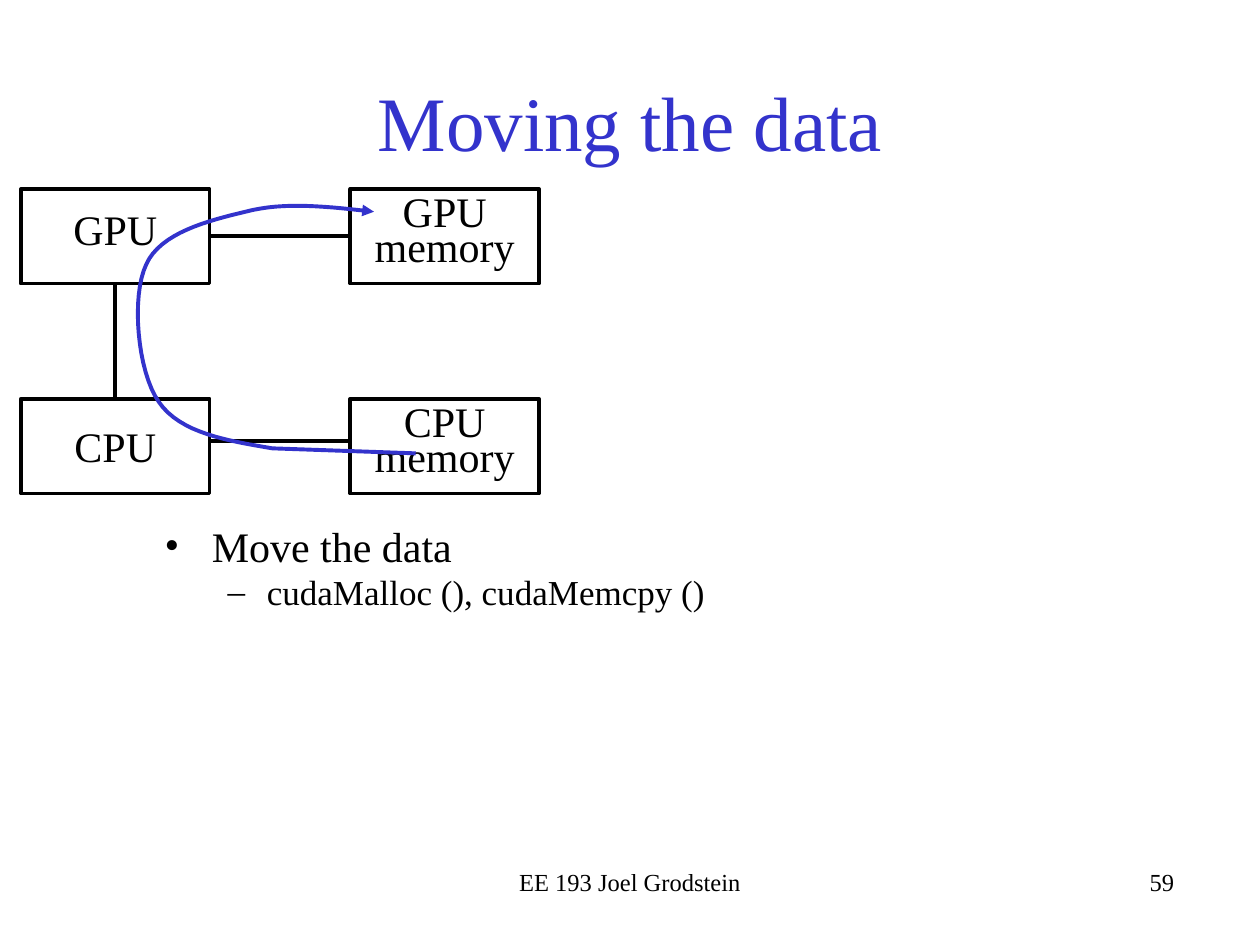
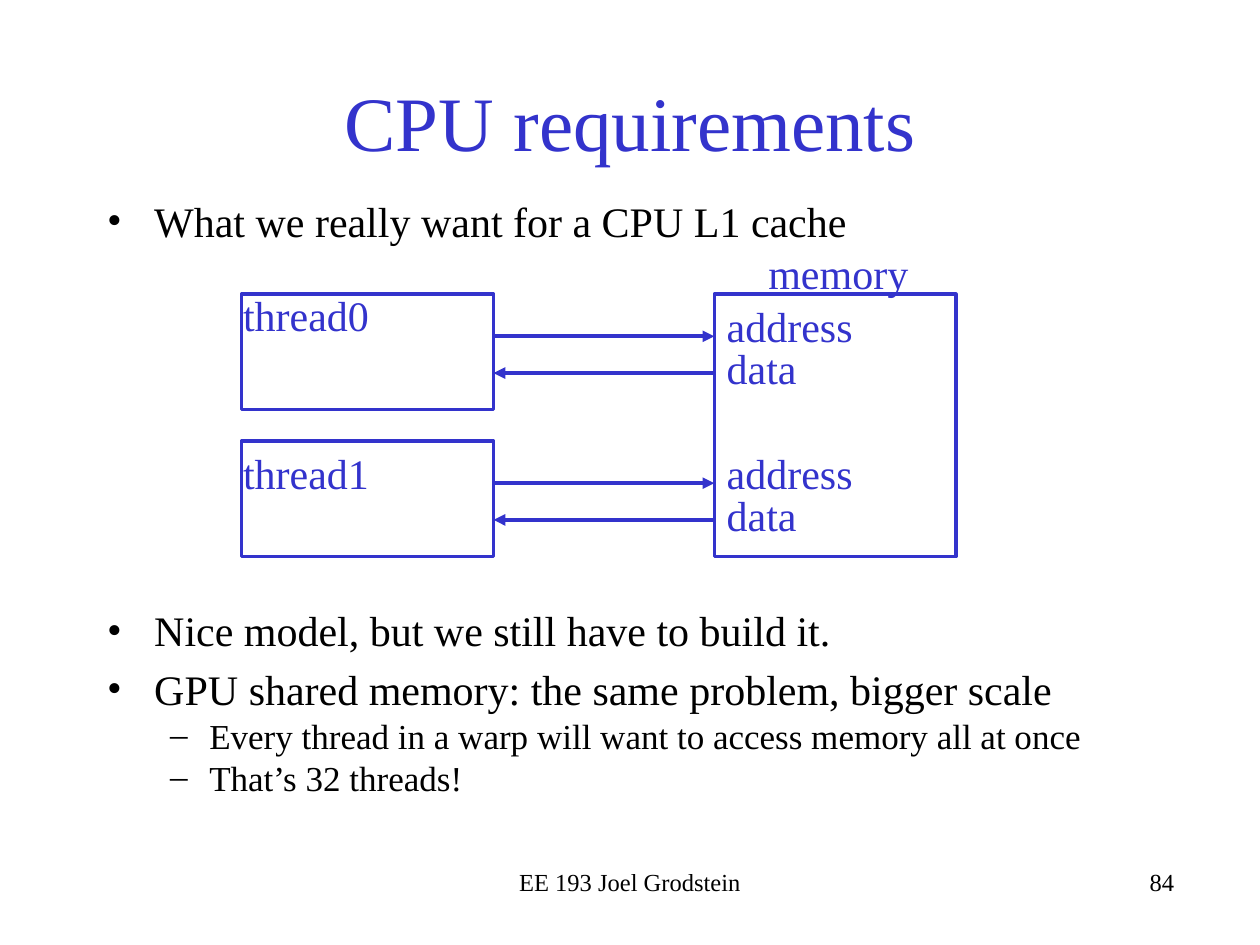
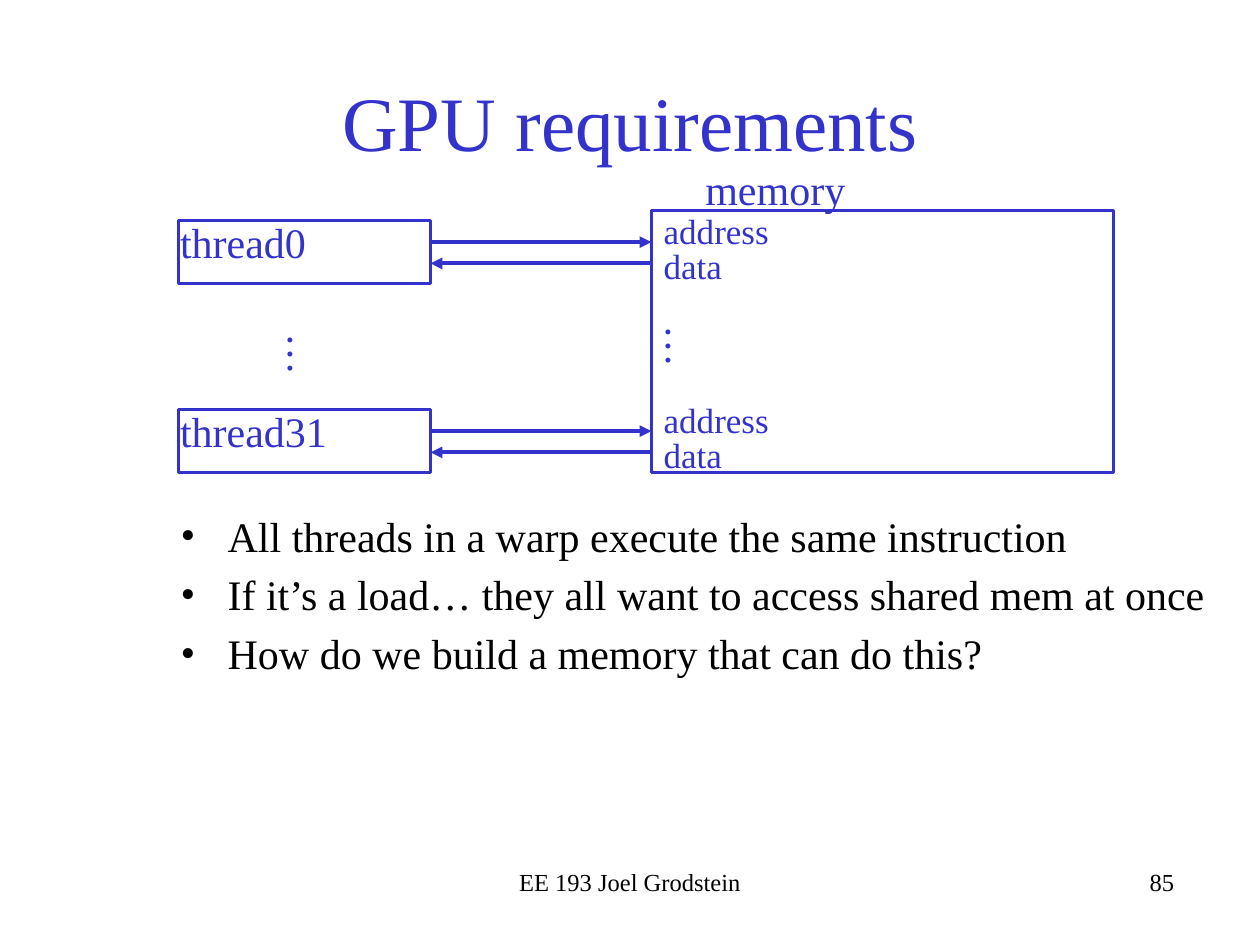
from dataclasses import dataclass
from typing import NamedTuple

from pptx import Presentation
from pptx.dml.color import RGBColor
from pptx.enum.shapes import MSO_CONNECTOR, MSO_SHAPE
from pptx.enum.text import MSO_ANCHOR as Anchor, PP_ALIGN as Align
from pptx.oxml.ns import qn
from pptx.util import Cm, Pt
from lxml.etree import SubElement

BLACK = RGBColor(0x00, 0x00, 0x00)
BLUE = RGBColor(0x33, 0x33, 0xCC)
FONT = "Times New Roman"
FOOTER = "EE 193 Joel Grodstein"


class Point(NamedTuple):
    x: float
    y: float


class Area(NamedTuple):
    """A rectangle in centimetres."""
    left: float
    top: float
    width: float
    height: float

    def lengths(self) -> list[Cm]:
        return [Cm(value) for value in self]


@dataclass(frozen=True)
class Style:
    size: int = 24
    color: RGBColor = BLUE
    align: Align = Align.LEFT
    anchor: Anchor = Anchor.TOP
    line_points: int | None = None


@dataclass(frozen=True)
class Level:
    bullet: str
    size: int
    margin: float
    hanging: float
    before_percent: int


class Item(NamedTuple):
    text: str
    level: int = 0


@dataclass(frozen=True)
class Thread:
    name: str
    top: float
    label_top: float


@dataclass(frozen=True)
class ThreadDiagram:
    """Threads at the left, each with an address and a data arrow to memory."""
    left: float
    memory_top: float
    memory_width: float
    thread_height: float
    address_drop: float
    data_drop: float
    threads: tuple[Thread, ...]

    @property
    def memory_left(self) -> float:
        return self.left + THREAD_WIDTH + ARROW_LENGTH


THREAD_WIDTH = 5.08
ARROW_LENGTH = 4.45
MEMORY_HEIGHT = 5.29
LABEL_HEIGHT = 1.27

TITLE_AREA = Area(1.91, 0.85, 21.59, 3.17)
FOOTER_AREA = Area(8.68, 17.36, 8.04, 1.27)
NUMBER_AREA = Area(15.88, 17.36, 8.04, 1.27)

LABEL = Style()
TITLE = Style(44, BLUE, Align.CENTER, Anchor.MIDDLE)
FOOTER_STYLE = Style(14, BLACK, Align.CENTER)
NUMBER_STYLE = Style(14, BLACK, Align.RIGHT)
PORTS = Style(20, line_points=20)
UNIT = Style(24, BLACK, Align.CENTER, Anchor.MIDDLE)
TIGHT_UNIT = Style(24, BLACK, Align.CENTER, Anchor.MIDDLE, 20)

LEVELS = (
    Level("•", 24, 0.95, 0.95, 20),
    Level("–", 20, 2.06, 0.79, 0),
)


def format_paragraph(para, style: Style) -> None:
    para.alignment = style.align
    if style.line_points:
        para.line_spacing = Pt(style.line_points)
    for span in para.runs:
        span.font.name = FONT
        span.font.size = Pt(style.size)
        span.font.color.rgb = style.color


def fill_text(shape, text: str, style: Style) -> None:
    frame = shape.text_frame
    frame.text = text
    frame.word_wrap = True
    frame.vertical_anchor = style.anchor
    for para in frame.paragraphs:
        format_paragraph(para, style)


def add_text(page, area: Area, text: str, style: Style = LABEL, rotation: int = 0) -> None:
    box = page.shapes.add_textbox(*area.lengths())
    box.rotation = rotation
    fill_text(box, text, style)


def add_box(page, area: Area, color: RGBColor):
    box = page.shapes.add_shape(MSO_SHAPE.RECTANGLE, *area.lengths())
    box.shadow.inherit = False
    box.fill.background()
    box.line.color.rgb = color
    box.line.width = Pt(2)
    return box


def add_arrowhead(shape) -> None:
    outline = shape._element.spPr.find(qn("a:ln"))
    SubElement(outline, qn("a:tailEnd"), type="triangle")


def add_line(page, start: Point, end: Point, color: RGBColor, arrow: bool = False) -> None:
    ends = [Cm(value) for value in (*start, *end)]
    connector = page.shapes.add_connector(MSO_CONNECTOR.STRAIGHT, *ends)
    connector.line.color.rgb = color
    connector.line.width = Pt(2.25)
    if arrow:
        add_arrowhead(connector)
    SubElement(connector._element.spPr, qn("a:effectLst"))


def add_bullets(page, area: Area, items: list[Item]) -> None:
    box = page.shapes.add_textbox(*area.lengths())
    frame = box.text_frame
    frame.word_wrap = True
    frame.text = "\n".join(item.text for item in items)
    for para, item in zip(frame.paragraphs, items):
        level = LEVELS[item.level]
        para.level = item.level
        format_paragraph(para, Style(level.size, BLACK))
        properties = para._p.get_or_add_pPr()
        properties.set("marL", str(Cm(level.margin)))
        properties.set("indent", str(-Cm(level.hanging)))
        before = SubElement(properties, qn("a:spcBef"))
        SubElement(before, qn("a:spcPct"), val=str(level.before_percent * 1000))
        SubElement(properties, qn("a:buFont"), typeface=FONT)
        SubElement(properties, qn("a:buChar"), char=level.bullet)


def bezier_points(start: Point, first: Point, second: Point, end: Point,
                  steps: int = 16) -> list[Point]:
    """Points along a cubic curve, without its start."""
    points = []
    for step in range(1, steps + 1):
        t = step / steps
        weights = ((1 - t) ** 3, 3 * t * (1 - t) ** 2, 3 * t ** 2 * (1 - t), t ** 3)
        corners = (start, first, second, end)
        points.append(Point(
            sum(weight * corner.x for weight, corner in zip(weights, corners)),
            sum(weight * corner.y for weight, corner in zip(weights, corners)),
        ))
    return points


def add_data_route(page) -> None:
    """The curved arrow from CPU memory through both processors to GPU memory."""
    start, bend = Point(8.38, 9.14), Point(5.49, 9.04)
    curves = (
        (Point(4.62, 8.89), Point(3.63, 8.74), Point(3.2, 8.1)),
        (Point(2.77, 7.49), Point(2.64, 5.97), Point(2.95, 5.33)),
        (Point(3.23, 4.7), Point(4.19, 4.45), Point(4.95, 4.27)),
        (Point(5.74, 4.06), Point(6.63, 4.17), Point(7.54, 4.27)),
    )
    points = [bend]
    for curve in curves:
        points += bezier_points(points[-1], *curve)
    builder = page.shapes.build_freeform(Cm(start.x), Cm(start.y))
    builder.add_line_segments([(Cm(x), Cm(y)) for x, y in points], close=False)
    route = builder.convert_to_shape()
    route.shadow.inherit = False
    route.fill.background()
    route.line.color.rgb = BLUE
    route.line.width = Pt(2.25)
    add_arrowhead(route)


def add_page(deck, title: str, number: int):
    page = deck.slides.add_slide(deck.slide_layouts[6])
    add_text(page, NUMBER_AREA, str(number), NUMBER_STYLE)
    add_text(page, TITLE_AREA, title, TITLE)
    add_text(page, FOOTER_AREA, FOOTER, FOOTER_STYLE)
    return page


def add_thread_diagram(page, diagram: ThreadDiagram) -> None:
    memory_left = diagram.memory_left
    thread_right = diagram.left + THREAD_WIDTH
    add_box(page, Area(memory_left, diagram.memory_top, diagram.memory_width, MEMORY_HEIGHT), BLUE)
    add_text(page, Area(memory_left + 0.84, diagram.memory_top - 1.06, 3.38, LABEL_HEIGHT), "memory")
    for thread in diagram.threads:
        add_box(page, Area(diagram.left, thread.top, THREAD_WIDTH, diagram.thread_height), BLUE)
        add_text(page, Area(diagram.left - 0.22, thread.label_top, 3.6, LABEL_HEIGHT), thread.name)
        address_y = thread.top + diagram.address_drop
        data_y = thread.top + diagram.data_drop
        add_line(page, Point(thread_right, address_y), Point(memory_left, address_y), BLUE, arrow=True)
        add_line(page, Point(memory_left, data_y), Point(thread_right, data_y), BLUE, arrow=True)


def build_moving_data(deck) -> None:
    page = add_page(deck, "Moving the data", 59)
    add_bullets(page, Area(3.07, 10.37, 19.56, 6.99), [
        Item("Move the data"),
        Item("cudaMalloc (), cudaMemcpy ()", 1),
    ])
    width, height = 3.81, 1.91
    processor_left, memory_left = 0.42, 7.06
    gpu_top, cpu_top = 3.81, 8.04
    units = (
        ("GPU", processor_left, gpu_top, TIGHT_UNIT),
        ("GPU memory", memory_left, gpu_top, TIGHT_UNIT),
        ("CPU", processor_left, cpu_top, UNIT),
        ("CPU memory", memory_left, cpu_top, TIGHT_UNIT),
    )
    for name, left, top, style in units:
        fill_text(add_box(page, Area(left, top, width, height), BLACK), name, style)
    for y in (4.76, 8.89):
        add_line(page, Point(processor_left + width, y), Point(memory_left, y), BLACK)
    middle = processor_left + width / 2
    add_line(page, Point(middle, gpu_top + height), Point(middle, cpu_top), BLACK)
    add_data_route(page)


def build_cpu_requirements(deck) -> None:
    page = add_page(deck, "CPU requirements", 84)
    add_bullets(page, Area(1.91, 3.81, 21.39, 1.7), [
        Item("What we really want for a CPU L1 cache"),
    ])
    diagram = ThreadDiagram(
        left=4.87, memory_top=5.93, memory_width=4.87, thread_height=2.33,
        address_drop=0.85, data_drop=1.59,
        threads=(Thread("thread0", 5.93, 5.72), Thread("thread1", 8.89, 8.89)),
    )
    add_thread_diagram(page, diagram)
    for thread in diagram.threads:
        for row, port in enumerate(("address", "data")):
            top = thread.top + row * 0.85
            add_text(page, Area(diagram.memory_left, top, 3.38, LABEL_HEIGHT), port)
    add_bullets(page, Area(1.91, 12.07, 21.39, 5.28), [
        Item("Nice model, but we still have to build it."),
        Item("GPU shared memory: the same problem, bigger scale"),
        Item("Every thread in a warp will want to access memory all at once", 1),
        Item("That’s 32 threads!", 1),
    ])


def build_gpu_requirements(deck) -> None:
    page = add_page(deck, "GPU requirements", 85)
    add_bullets(page, Area(3.39, 10.16, 21.39, 6.99), [
        Item("All threads in a warp execute the same instruction"),
        Item("If it’s a load… they all want to access shared mem at once"),
        Item("How do we build a memory that can do this?"),
    ])
    diagram = ThreadDiagram(
        left=3.6, memory_top=4.24, memory_width=9.32, thread_height=1.27,
        address_drop=0.43, data_drop=0.86,
        threads=(Thread("thread0", 4.45, 4.23), Thread("thread31", 8.26, 8.05)),
    )
    add_thread_diagram(page, diagram)
    for thread in diagram.threads:
        add_text(page, Area(diagram.memory_left, thread.top - 0.21, 3.38, 1.68), "address\ndata", PORTS)
    for left, top in (Point(5.61, 6.38), Point(13.23, 6.22)):
        add_text(page, Area(left, top, 1.07, LABEL_HEIGHT), "…", rotation=90)


def main() -> None:
    deck = Presentation()
    deck.slide_width, deck.slide_height = Cm(25.4), Cm(19.05)
    build_moving_data(deck)
    build_cpu_requirements(deck)
    build_gpu_requirements(deck)
    deck.save("out.pptx")


if __name__ == "__main__":
    main()
